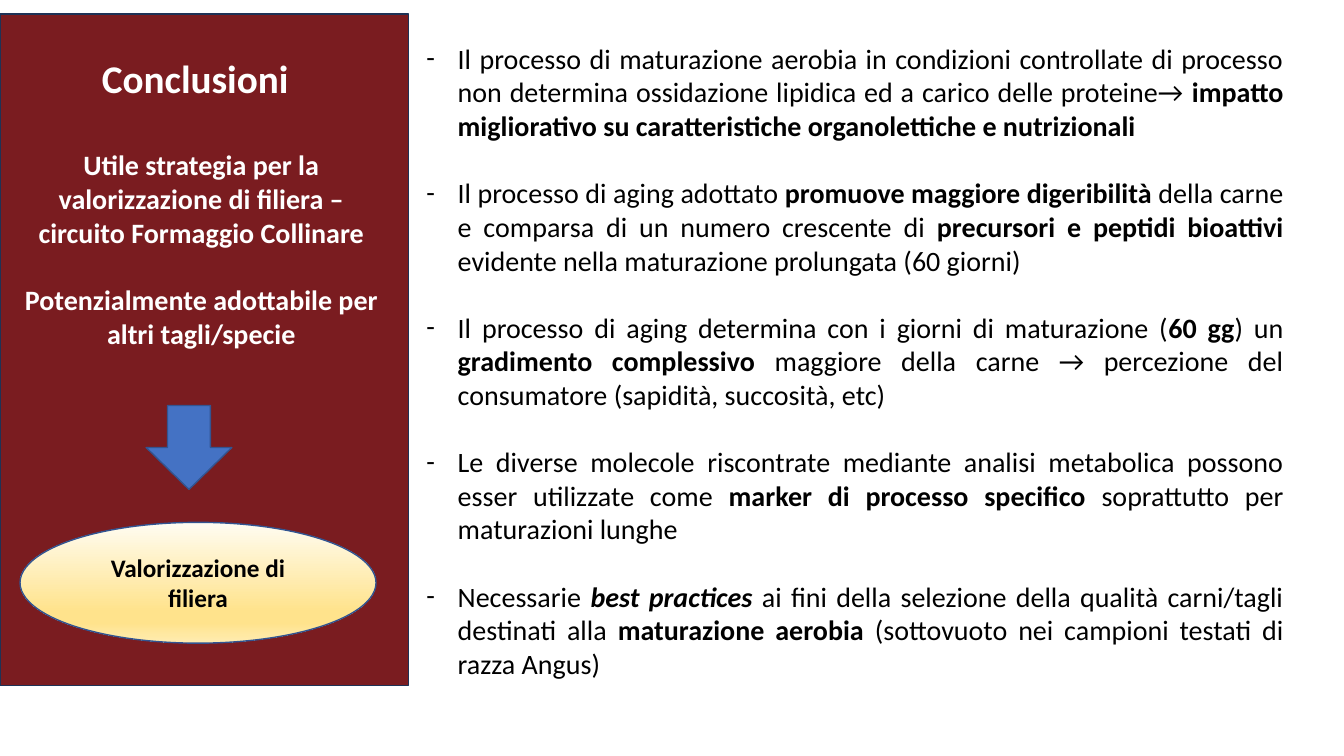
from copy import deepcopy

from lxml import etree
from pptx import Presentation
from pptx.dml.color import RGBColor
from pptx.enum.shapes import MSO_SHAPE as SHAPE
from pptx.enum.text import MSO_ANCHOR as ANCHOR, MSO_AUTO_SIZE as AUTO, PP_ALIGN as ALIGN
from pptx.oxml.ns import qn
from pptx.util import Inches, Pt

FONT = "Calibri"
WHITE, BLACK = "FFFFFF", "000000"
DARK_RED, NAVY = "7A1C20", "1E3256"
BLUE, BLUE_LINE = "4472C4", "325491"
GOLD_STOPS = [(0, "FFFCF2"), (0.74, "FFE38C"), (0.83, "FFE38C"), (1, "FFECB2")]
BLANK_LINE = Pt(24)

STRATEGY = [
    "Utile strategia per la valorizzazione di filiera – circuito Formaggio Collinare",
    "Potenzialmente adottabile per altri tagli/specie",
]
# Each run is its text and its style: "" plain, "b" bold, "bi" bold italic
FINDINGS = [
    [("Il processo di maturazione aerobia in condizioni controllate di processo non "
      "determina ossidazione lipidica ed a carico delle proteine→ ", ""),
     ("impatto migliorativo su caratteristiche organolettiche e nutrizionali", "b")],
    [("Il processo di aging adottato ", ""),
     ("promuove maggiore digeribilità ", "b"),
     ("della carne e comparsa di un numero crescente di ", ""),
     ("precursori e peptidi bioattivi ", "b"),
     ("evidente nella maturazione prolungata (60 giorni)", "")],
    [("Il processo di aging determina con i giorni di maturazione (", ""),
     ("60 gg", "b"),
     (") un ", ""),
     ("gradimento complessivo ", "b"),
     ("maggiore della carne → percezione del consumatore (sapidità, succosità, etc)", "")],
    [("Le diverse molecole riscontrate mediante analisi metabolica possono esser "
      "utilizzate come ", ""),
     ("marker di processo specifico ", "b"),
     ("soprattutto per maturazioni lunghe", "")],
    [("Necessarie ", ""),
     ("best practices ", "bi"),
     ("ai fini della selezione della qualità carni/tagli destinati alla ", ""),
     ("maturazione aerobia ", "b"),
     ("(sottovuoto nei campioni testati di razza Angus)", "")],
]


def rgb(value):
    return RGBColor.from_string(value)


def part(box, left, top, width, height):
    """Return the box lying at these percentages of the given box."""
    x, y, w, h = box
    return (int(x + w * left / 100), int(y + h * top / 100),
            int(w * width / 100), int(h * height / 100))


def place(sp, box):
    sp.left, sp.top, sp.width, sp.height = box


def add_run(p, text, size, color, style=""):
    r = p.add_run()
    r.text = text
    r.font.name, r.font.size = FONT, Pt(size)
    r.font.bold, r.font.italic = "b" in style, "i" in style
    r.font.color.rgb = rgb(color)


def paragraphs(tf, count, align):
    """Yield paragraphs that are one blank line apart."""
    for i in range(count):
        p = tf.add_paragraph() if i else tf.paragraphs[0]
        p.alignment = align
        p.space_before = BLANK_LINE if i else Pt(0)
        yield p


def add_shape(slide, kind, box, fill, line):
    sp = slide.shapes.add_shape(kind, *box)
    sp.shadow.inherit = False
    if fill:
        sp.fill.solid()
        sp.fill.fore_color.rgb = rgb(fill)
    sp.line.color.rgb = rgb(line)
    sp.line.width = Pt(1)
    return sp


def fill_gradient(sp, stops):
    """Fill from top to bottom with (position, colour) stops."""
    sp.fill.gradient()
    sp.fill.gradient_angle = 270
    gs_list = sp._element.spPr.find(qn("a:gradFill")).find(qn("a:gsLst"))
    while len(gs_list) < len(stops):
        gs_list.append(deepcopy(gs_list[0]))
    for stop, (position, color) in zip(sp.fill.gradient_stops, stops):
        stop.position = position
        stop.color.rgb = rgb(color)


def add_dash(p):
    pPr = p._p.get_or_add_pPr()
    pPr.set("marL", str(Inches(0.31)))
    pPr.set("indent", str(Inches(-0.31)))
    etree.SubElement(pPr, qn("a:buFont")).set("typeface", FONT)
    etree.SubElement(pPr, qn("a:buChar")).set("char", "-")


def conclusion_panel(slide, box):
    panel = add_shape(slide, SHAPE.RECTANGLE, box, DARK_RED, NAVY)
    panel._element.getparent().insert(2, panel._element)  # behind the title

    title = slide.shapes.title
    place(title, part(box, 0, -2.1, 95.6, 24.2))
    title.text_frame.vertical_anchor = ANCHOR.MIDDLE
    p = title.text_frame.paragraphs[0]
    p.alignment, p.line_spacing = ALIGN.CENTER, 0.9
    add_run(p, "Conclusioni", 28, WHITE, "b")

    tf = slide.shapes.add_textbox(*part(box, 3, 19.2, 92.6, 36.9)).text_frame
    tf.word_wrap = True
    for p, text in zip(paragraphs(tf, len(STRATEGY), ALIGN.CENTER), STRATEGY):
        add_run(p, text, 20, WHITE, "b")

    add_shape(slide, SHAPE.DOWN_ARROW, part(box, 35.8, 58.3, 21, 12.5), BLUE, BLUE_LINE)

    goal = add_shape(slide, SHAPE.OVAL, part(box, 4.9, 75.7, 87.2, 18), None, BLUE_LINE)
    fill_gradient(goal, GOLD_STOPS)
    tf = goal.text_frame
    tf.word_wrap, tf.vertical_anchor = True, ANCHOR.MIDDLE
    p = tf.paragraphs[0]
    p.alignment = ALIGN.CENTER
    add_run(p, "Valorizzazione di filiera", 18, BLACK, "b")


def findings_list(slide, box):
    body = slide.placeholders[1]
    place(body, box)
    tf = body.text_frame
    tf.word_wrap, tf.auto_size = True, AUTO.SHAPE_TO_FIT_TEXT
    tf.vertical_anchor = ANCHOR.TOP
    for p, runs in zip(paragraphs(tf, len(FINDINGS), ALIGN.JUSTIFY), FINDINGS):
        add_dash(p)
        for text, style in runs:
            add_run(p, text, 20, BLACK, style)


def main():
    prs = Presentation()
    prs.slide_width, prs.slide_height = Inches(13.33), Inches(7.5)
    slide = prs.slides.add_slide(prs.slide_layouts[1])
    page = (0, 0, prs.slide_width, prs.slide_height)
    conclusion_panel(slide, part(page, 0, 1.87, 30.38, 88.8))
    findings_list(slide, part(page, 30.98, 4.8, 65.27, 92))
    prs.save("out.pptx")


if __name__ == "__main__":
    main()
